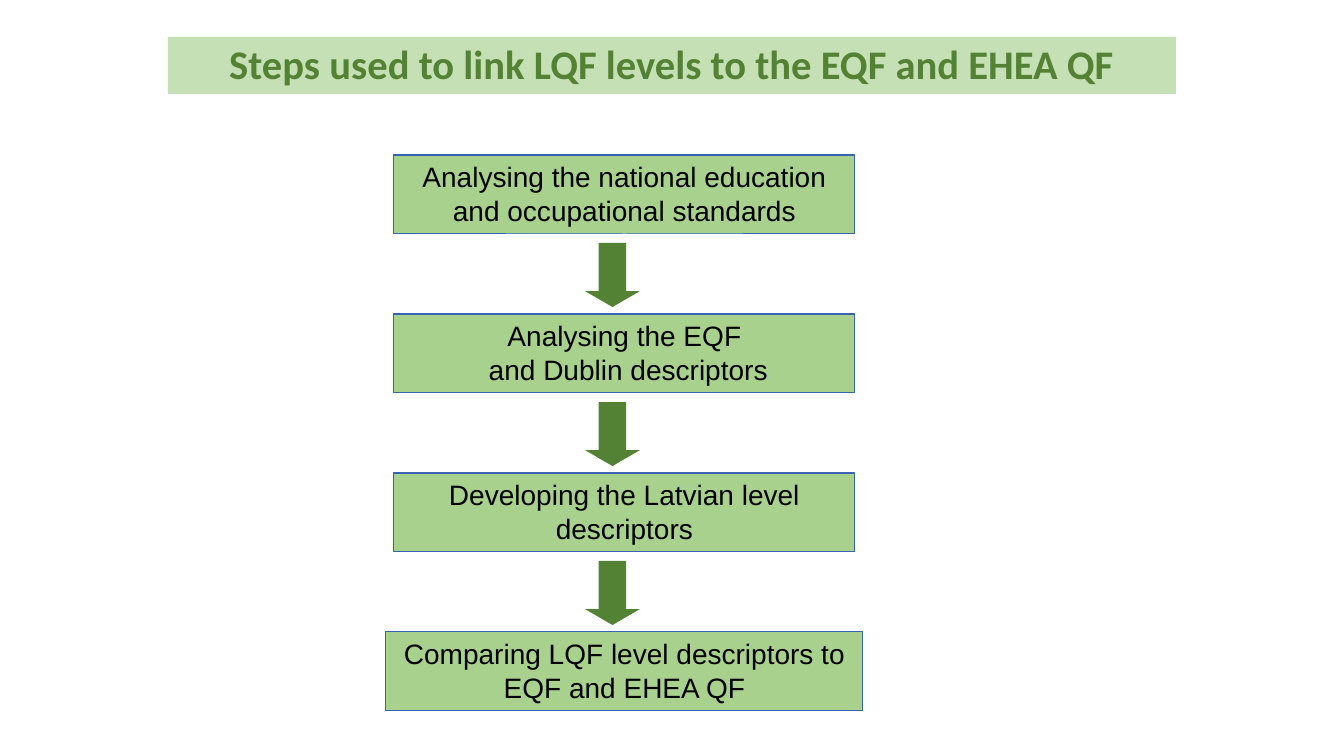
from pptx import Presentation
from pptx.dml.color import RGBColor
from pptx.enum.shapes import MSO_SHAPE
from pptx.enum.text import MSO_ANCHOR, MSO_AUTO_SIZE, PP_ALIGN
from pptx.util import Pt

PX = 914400 / 100.8
COLORS = {"band": "C5E0B4", "box": "A9D18E", "dark": "548235", "edge": "3962B5", "text": "000000"}
STEPS = [
    (394, 461, ["Analysing the national education and occupational standards"]),
    (394, 461, ["Analysing the EQF", " and Dublin descriptors"]),
    (394, 461, ["Developing the Latvian level descriptors"]),
    (386, 477, ["Comparing LQF level descriptors to EQF and EHEA QF"]),
]
TOP, PITCH, BOX_H = 155, 159, 79
ARROW_X, ARROW_W, ARROW_H, ARROW_DY = 585, 55, 64, 88


def add_block(kind, x, y, w, h, fill):
    sp = s.shapes.add_shape(kind, *(round(v * PX) for v in (x, y, w, h)))
    sp.shadow.inherit = False
    sp.fill.solid()
    sp.fill.fore_color.rgb = RGBColor.from_string(COLORS[fill])
    sp.line.fill.background()
    return sp


def add_run(p, text, font, size, color, bold=False):
    r = p.add_run()
    r.text = text
    r.font.name = font
    r.font.size = Pt(size)
    r.font.bold = bold
    r.font.color.rgb = RGBColor.from_string(COLORS[color])


prs = Presentation()
prs.slide_width, prs.slide_height = round(1344 * PX), round(756 * PX)
s = prs.slides.add_slide(prs.slide_layouts[5])

title = s.shapes.title
title.left, title.top, title.width, title.height = (round(v * PX) for v in (168, 37, 1008, 57))
title.fill.solid()
title.fill.fore_color.rgb = RGBColor.from_string(COLORS["band"])
tf = title.text_frame
tf.word_wrap = True
tf.auto_size = MSO_AUTO_SIZE.NONE
tf.vertical_anchor = MSO_ANCHOR.MIDDLE
p = tf.paragraphs[0]
p.alignment = PP_ALIGN.CENTER
p.line_spacing = 0.99
add_run(p, "Steps used to link LQF levels to the EQF and EHEA QF", "Calibri", 29, "dark", True)

for i, (x, w, lines) in enumerate(STEPS):
    y = TOP + i * PITCH
    box = add_block(MSO_SHAPE.RECTANGLE, x, y, w, BOX_H, "box")
    box.line.color.rgb = RGBColor.from_string(COLORS["edge"])
    box.line.width = Pt(0.75)
    tf = box.text_frame
    tf.word_wrap = True
    tf.auto_size = MSO_AUTO_SIZE.SHAPE_TO_FIT_TEXT
    tf.vertical_anchor = MSO_ANCHOR.TOP
    p = tf.paragraphs[0]
    p.alignment = PP_ALIGN.CENTER
    for n, line in enumerate(lines):
        if n:
            p.add_line_break()
        add_run(p, line, "Arial", 20, "text")
    if i < len(STEPS) - 1:
        arrow = add_block(MSO_SHAPE.DOWN_ARROW, ARROW_X, y + ARROW_DY, ARROW_W, ARROW_H, "dark")
        arrow.adjustments[0] = 0.5
        arrow.adjustments[1] = 0.29

prs.save("out.pptx")
